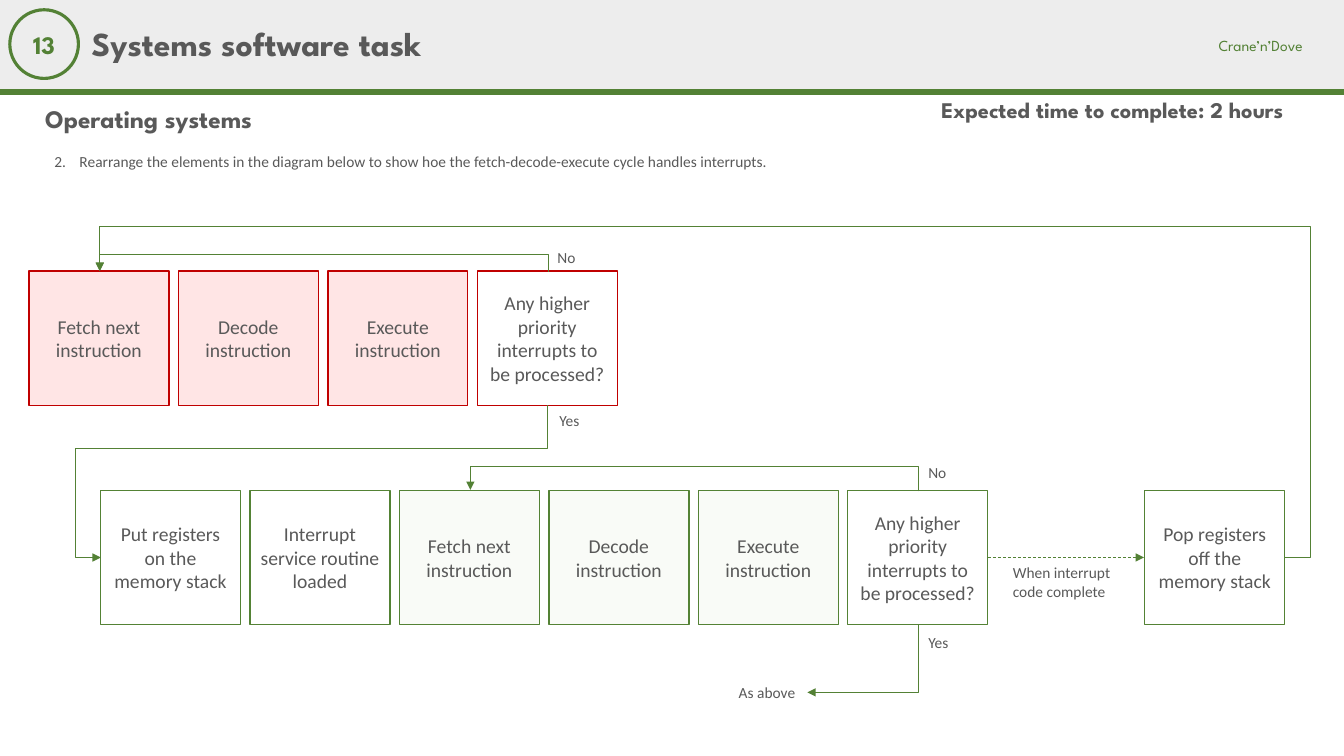
"""Build the systems software task slide on interrupts in the fetch-decode-execute cycle."""
import lxml.etree
import pptx
import pptx.dml.color
import pptx.enum.dml
import pptx.enum.shapes
import pptx.enum.text
import pptx.oxml.ns
import pptx.util

Pt = pptx.util.Pt
qn = pptx.oxml.ns.qn
RGBColor = pptx.dml.color.RGBColor
SHAPE = pptx.enum.shapes.MSO_SHAPE
CONNECTOR = pptx.enum.shapes.MSO_CONNECTOR
LEFT = pptx.enum.text.PP_ALIGN.LEFT
CENTER = pptx.enum.text.PP_ALIGN.CENTER
TOP = pptx.enum.text.MSO_ANCHOR.TOP
MIDDLE = pptx.enum.text.MSO_ANCHOR.MIDDLE

GREEN = RGBColor(0x53, 0x81, 0x35)
BOX_GREEN = RGBColor(0x54, 0x82, 0x35)
PALE_GREEN = RGBColor(0xC5, 0xE0, 0xB4)
DARK_RED = RGBColor(0xC0, 0x00, 0x00)
RED = RGBColor(0xFF, 0x00, 0x00)
GREY = RGBColor(0x59, 0x59, 0x59)
LIGHT_GREY = RGBColor(0xED, 0xED, 0xED)
HEADING_FONT = "League Spartan"
BODY_FONT = "Calibri"


def write(shape, text, size, font=BODY_FONT, color=GREY, bold=False,
          align=LEFT, anchor=TOP, wrap=True):
    """Fill a shape with one formatted paragraph and return that paragraph."""
    frame = shape.text_frame
    frame.text = text
    frame.word_wrap = wrap
    frame.vertical_anchor = anchor
    paragraph = frame.paragraphs[0]
    paragraph.alignment = align
    run_font = paragraph.runs[0].font
    run_font.name, run_font.size, run_font.bold = font, Pt(size), bold
    run_font.color.rgb = color
    return paragraph


def add_outline(kind, left, top, width, height, line_color, line_width, tint=None):
    """Add a shape with an outline and either a faint tint or no fill."""
    shape = shapes.add_shape(kind, Pt(left), Pt(top), Pt(width), Pt(height))
    shape.shadow.inherit = False
    shape.line.color.rgb = line_color
    shape.line.width = Pt(line_width)
    if tint is None:
        shape.fill.background()
    else:
        shape.fill.solid()
        shape.fill.fore_color.rgb = tint
        tint_color = shape._element.spPr.find(qn("a:solidFill"))[0]
        lxml.etree.SubElement(tint_color, qn("a:alpha"), val="10000")
    return shape


presentation = pptx.Presentation()
presentation.slide_width = Pt(960)
presentation.slide_height = Pt(540)
slide = presentation.slides.add_slide(presentation.slide_layouts[5])
shapes = slide.shapes

header = shapes.add_shape(SHAPE.RECTANGLE, 0, 0, Pt(960), Pt(65.5))
header.shadow.inherit = False
header.fill.solid()
header.fill.fore_color.rgb = LIGHT_GREY
header.line.fill.background()
header_rule = shapes.add_connector(CONNECTOR.STRAIGHT, 0, Pt(65.5), Pt(960), Pt(65.5))
header_rule.line.color.rgb = GREEN
header_rule.line.width = Pt(4.5)
lxml.etree.SubElement(header_rule._element.spPr, qn("a:effectLst"))

title = shapes.title
title.left, title.top, title.width, title.height = Pt(58.3), Pt(6.5), Pt(742.3), Pt(52.6)
write(title, "Systems software task", 24, HEADING_FONT, bold=True, anchor=MIDDLE).line_spacing = 0.9
shapes._spTree.append(title._element)

task_number = add_outline(SHAPE.OVAL, 7, 7, 49, 49, GREEN, 2.25)
task_number.text_frame.margin_left = task_number.text_frame.margin_right = 0
write(task_number, "13", 18, HEADING_FONT, GREEN, True, CENTER, MIDDLE)

publisher = shapes.add_textbox(Pt(863.3), Pt(22.3), Pt(87.8), Pt(20.9))
write(publisher, "Crane’n’Dove", 11, HEADING_FONT, GREEN, wrap=False)
duration = shapes.add_textbox(Pt(665.3), Pt(67), Pt(294.5), Pt(28.8))
write(duration, "Expected time to complete: 2 hours", 16, HEADING_FONT, bold=True).line_spacing = 0.9
topic = shapes.add_textbox(Pt(25.2), Pt(71.3), Pt(411), Pt(28.8))
write(topic, "Operating systems", 18, HEADING_FONT, bold=True, anchor=MIDDLE).line_spacing = 0.9

question = shapes.add_textbox(Pt(31.7), Pt(105.1), Pt(536.4), Pt(20.9))
question_line = write(
    question,
    "Rearrange the elements in the diagram below to show hoe the "
    "fetch-decode-execute cycle handles interrupts.", 11)
numbering = question_line._p.get_or_add_pPr()
numbering.set("marL", str(Pt(18)))
numbering.set("indent", str(-Pt(18)))
lxml.etree.SubElement(numbering, qn("a:buAutoNum"), type="arabicPeriod", startAt="2")

FETCH, DECODE, EXECUTE = "Fetch next instruction", "Decode instruction", "Execute instruction"
CHECK = "Any higher priority interrupts to be processed?"
BOX_WIDTH, BOX_HEIGHT, BOX_STEP = 100, 95.8, 106.75
box_rows = [
    (20.7, 193.7, DARK_RED, RED, [FETCH, DECODE, EXECUTE, CHECK]),
    (71.8, 350.4, BOX_GREEN, PALE_GREEN,
     ["Put registers on the memory stack", "Interrupt service routine loaded",
      FETCH, DECODE, EXECUTE, CHECK]),
    (817.7, 350.2, BOX_GREEN, PALE_GREEN, ["Pop registers off the memory stack"]),
]
for row_left, row_top, edge, tint, steps in box_rows:
    for column, step in enumerate(steps):
        step_box = add_outline(
            SHAPE.RECTANGLE, row_left + column * BOX_STEP, row_top, BOX_WIDTH, BOX_HEIGHT,
            edge, 1, tint if step in (FETCH, DECODE, EXECUTE) else None)
        write(step_box, step, 14, align=CENTER, anchor=MIDDLE)

branch_labels = [
    ("No", 391, 173.5, 27.4), ("Yes", 392.4, 290.2, 29.5),
    ("No", 656, 327, 27.4), ("Yes", 656, 448.6, 29.5),
    ("As above", 520.6, 484.4, 55.4),
]
for label, left, top, width in branch_labels:
    branch = shapes.add_textbox(Pt(left), Pt(top), Pt(width), Pt(20.9))
    write(branch, label, 11, wrap=False)
completion = shapes.add_textbox(Pt(716.4), Pt(398.9), Pt(100.8), Pt(33.8))
write(completion, "When interrupt code complete", 11)

arrows = [
    ((391.7, 194.4), (71.3, 193.4), "bentConnector3", [12.6], 270, ["flipV"]),
    ((656, 351), (336, 350), "bentConnector3", [18], 270, ["flipV"]),
    ((705.6, 398.2), (817.2, 398.2), "straightConnector1", [], 0, []),
    ((391, 289.5), (72, 398.2), "bentConnector4", [0.28, 1.056], 90, []),
    ((655.7, 446.4), (576.7, 494.6), "bentConnector2", [], 90, []),
    ((918, 398.2), (71.3, 193.7), "bentConnector4", [-0.021, 1.157], 0, ["flipH", "flipV"]),
]
for (start_x, start_y), (end_x, end_y), route, bends, turn, flips in arrows:
    width, height = abs(end_x - start_x), abs(end_y - start_y)
    if turn:
        width, height = height, width
    left = (start_x + end_x - width) / 2
    top = (start_y + end_y - height) / 2
    arrow = shapes.add_connector(
        CONNECTOR.ELBOW, Pt(left), Pt(top), Pt(left + width), Pt(top + height))
    arrow.line.color.rgb = GREEN
    arrow.line.width = Pt(0.5)
    if route == "straightConnector1":
        arrow.line.dash_style = pptx.enum.dml.MSO_LINE.DASH
    properties = arrow._element.spPr
    frame = properties.find(qn("a:xfrm"))
    frame.set("rot", str(turn * 60000))
    for flip in flips:
        frame.set(flip, "1")
    geometry = properties.find(qn("a:prstGeom"))
    geometry.set("prst", route)
    adjustments = geometry.find(qn("a:avLst"))
    for index, bend in enumerate(bends, 1):
        lxml.etree.SubElement(adjustments, qn("a:gd"), name=f"adj{index}",
                              fmla=f"val {round(bend * 100000)}")
    lxml.etree.SubElement(properties.find(qn("a:ln")), qn("a:tailEnd"), type="triangle")
    lxml.etree.SubElement(properties, qn("a:effectLst"))

presentation.save("out.pptx")
